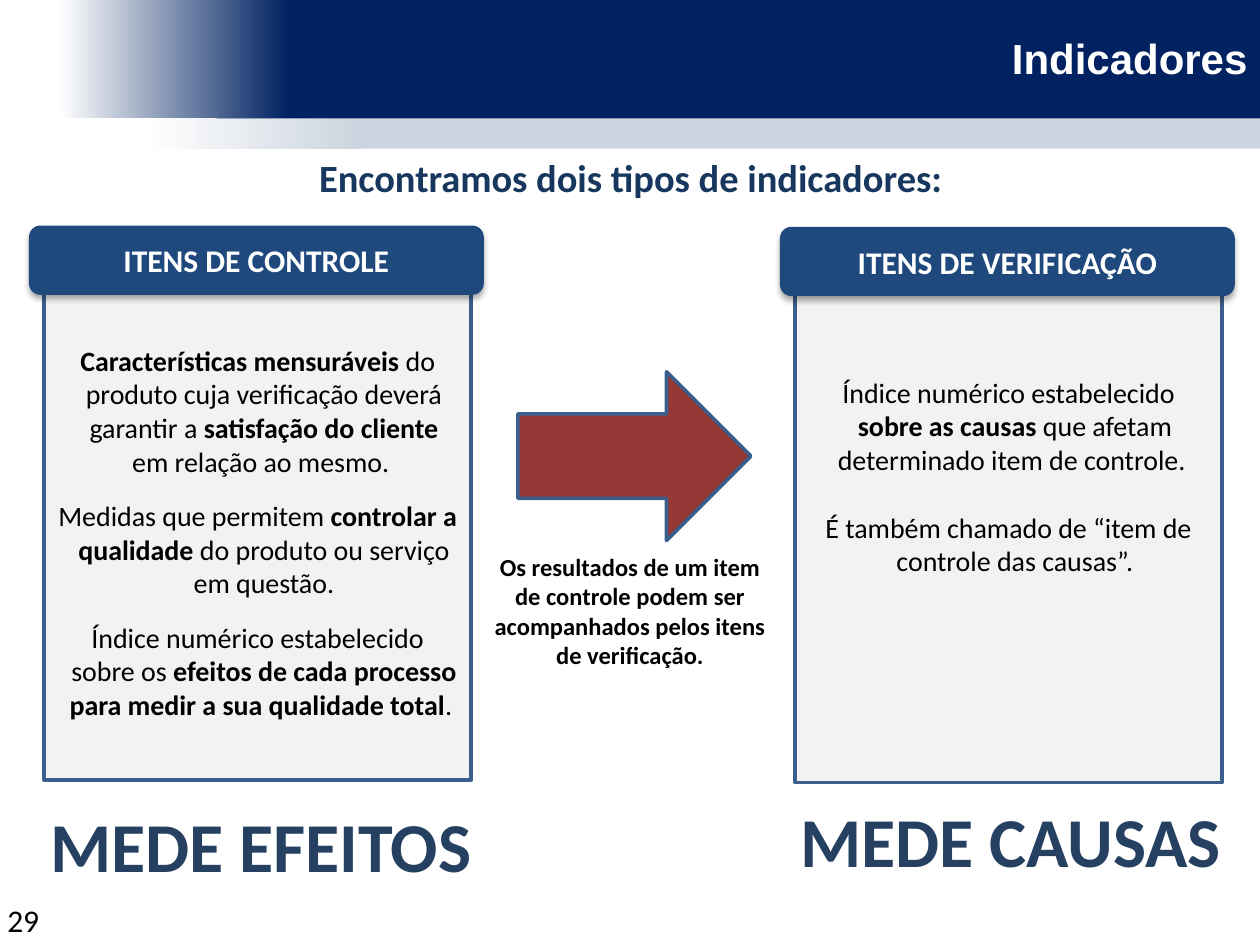
from lxml import etree
from pptx import Presentation
from pptx.dml.color import RGBColor
from pptx.enum.shapes import MSO_SHAPE as SHAPE
from pptx.enum.text import MSO_ANCHOR as ANCHOR, PP_ALIGN as ALIGN
from pptx.oxml import parse_xml
from pptx.oxml.ns import nsdecls, qn
from pptx.util import Inches, Pt

COLORS = {
    "white": "FFFFFF", "black": "000000", "band": "002261", "band_light": "CCD4DF",
    "header": "1F497D", "panel": "F2F2F2", "outline": "3A5F8C",
    "arrow": "953735", "subtitle": "17375E", "summary": "254061",
}

# Each paragraph is a list of (text, bold) runs
CONTROL = [
    [("Características mensuráveis ", True),
     ("do produto cuja verificação deverá garantir a ", False),
     ("satisfação do cliente ", True), ("em relação ao mesmo. ", False)],
    [("Medidas que permitem ", False), ("controlar a qualidade ", True),
     ("do produto ou serviço em questão.", False)],
    [("Índice numérico estabelecido sobre os ", False),
     ("efeitos de cada processo para medir a sua qualidade total", True),
     (". ", False)],
]
VERIFICATION = [
    [("Índice numérico estabelecido ", False), ("sobre as causas ", True),
     ("que afetam determinado item de controle. ", False)],
    [("É também chamado de “item de controle das causas”.", False)],
]


def rgb(name):
    return RGBColor.from_string(COLORS[name])


def set_font(font, size, color, bold=None, name="Calibri"):
    font.name, font.size, font.bold = name, Pt(size), bold
    font.color.rgb = rgb(color)


def add_shape(s, kind, box, fill, line=None):
    sp = s.shapes.add_shape(kind, *map(Inches, box))
    sp.shadow.inherit = False
    sp.fill.solid()
    sp.fill.fore_color.rgb = rgb(fill)
    if line:
        sp.line.color.rgb = rgb(line)
        sp.line.width = Pt(2)
    else:
        sp.line.fill.background()
    return sp


def add_fade(s, box, color):
    sp = add_shape(s, SHAPE.RECTANGLE, box, color)
    sp.fill.gradient()
    sp.fill.gradient_angle = 0
    for stop, name, position in zip(sp.fill.gradient_stops, ("white", color), (0, 1)):
        stop.color.rgb = rgb(name)
        stop.position = position


def add_text(s, box, text, size, color, bold=True, align=ALIGN.CENTER,
             anchor=ANCHOR.TOP, wrap=True, name="Calibri"):
    tf = s.shapes.add_textbox(*map(Inches, box)).text_frame
    tf.word_wrap, tf.vertical_anchor = wrap, anchor
    p = tf.paragraphs[0]
    p.text, p.alignment = text, align
    set_font(p.font, size, color, bold, name)


def add_panel(s, left, top, paragraphs, gap, anchor, inset=0.05):
    sp = add_shape(s, SHAPE.RECTANGLE, (left, top, 3.39, 3.93), "panel", "outline")
    tf = sp.text_frame
    tf.word_wrap, tf.vertical_anchor, tf.margin_top = True, anchor, Inches(inset)
    for i, runs in enumerate(paragraphs):
        p = tf.add_paragraph() if i else tf.paragraphs[0]
        p.alignment = ALIGN.CENTER
        # Hanging indent
        pPr = p._p.get_or_add_pPr()
        pPr.set("marL", str(Inches(0.1)))
        pPr.set("indent", str(-Inches(0.1)))
        if i:
            p.space_before = Pt(gap)
        set_font(p.font, 16, "black")
        for text, bold in runs:
            r = p.add_run()
            r.text, r.font.bold = text, bold


def add_header(s, left, top, text):
    sp = add_shape(s, SHAPE.ROUNDED_RECTANGLE, (left, top, 3.61, 0.55), "header")
    tf = sp.text_frame
    tf.word_wrap, tf.vertical_anchor = True, ANCHOR.MIDDLE
    p = tf.paragraphs[0]
    p.text, p.alignment = text, ALIGN.CENTER
    set_font(p.font, 18, "white", True)
    # Soft shadow straight below
    shadow = parse_xml(
        f'<a:outerShdw {nsdecls("a")} blurRad="{Pt(3.5)}" dist="{Pt(2.2)}" '
        f'dir="5400000" rotWithShape="0"/>')
    color = etree.SubElement(shadow, qn("a:srgbClr"), val=COLORS["black"])
    etree.SubElement(color, qn("a:alpha"), val="32000")
    sp._element.spPr.find(qn("a:effectLst")).append(shadow)


def main():
    prs = Presentation()
    prs.slide_width, prs.slide_height = Inches(10), Inches(7.5)
    s = prs.slides.add_slide(prs.slide_layouts[6])

    # Title bands
    add_shape(s, SHAPE.RECTANGLE, (2.01, 0.88, 7.99, 0.3), "band_light")
    add_fade(s, (1.14, 0.88, 1.73, 0.3), "band_light")
    add_shape(s, SHAPE.RECTANGLE, (1.72, 0, 8.28, 0.94), "band")
    add_fade(s, (0.47, 0, 1.82, 0.94), "band")
    add_text(s, (1.06, 0, 8.94, 0.92), "Indicadores", 24, "white",
             align=ALIGN.RIGHT, anchor=ANCHOR.MIDDLE, name="Arial")
    add_text(s, (0.28, 1.17, 9.45, 0.77),
             "Encontramos dois tipos de indicadores:", 22, "subtitle")

    # Control items
    add_panel(s, 0.35, 2.26, CONTROL, 12, ANCHOR.MIDDLE)
    add_header(s, 0.23, 1.79, "ITENS DE CONTROLE")
    add_text(s, (0.28, 6.32, 3.58, 0.77), "MEDE EFEITOS", 40, "summary", wrap=False)

    # Verification items
    add_panel(s, 6.31, 2.28, VERIFICATION, 19.5, ANCHOR.TOP, inset=0.7)
    add_header(s, 6.19, 1.8, "ITENS DE VERIFICAÇÃO")
    add_text(s, (6.23, 6.28, 3.58, 0.77), "MEDE CAUSAS", 40, "summary", wrap=False)

    # Link between the two
    add_shape(s, SHAPE.RIGHT_ARROW, (4.11, 2.95, 1.85, 1.34), "arrow", "outline")
    add_text(s, (3.82, 4.33, 2.36, 1.04),
             "Os resultados de um item de controle podem ser acompanhados "
             "pelos itens de verificação.", 14, "black")

    # Page number
    add_text(s, (-0.04, 7.1, 0.54, 0.4), "29", 18, "black", bold=False, align=ALIGN.LEFT)

    prs.save("out.pptx")


if __name__ == "__main__":
    main()
